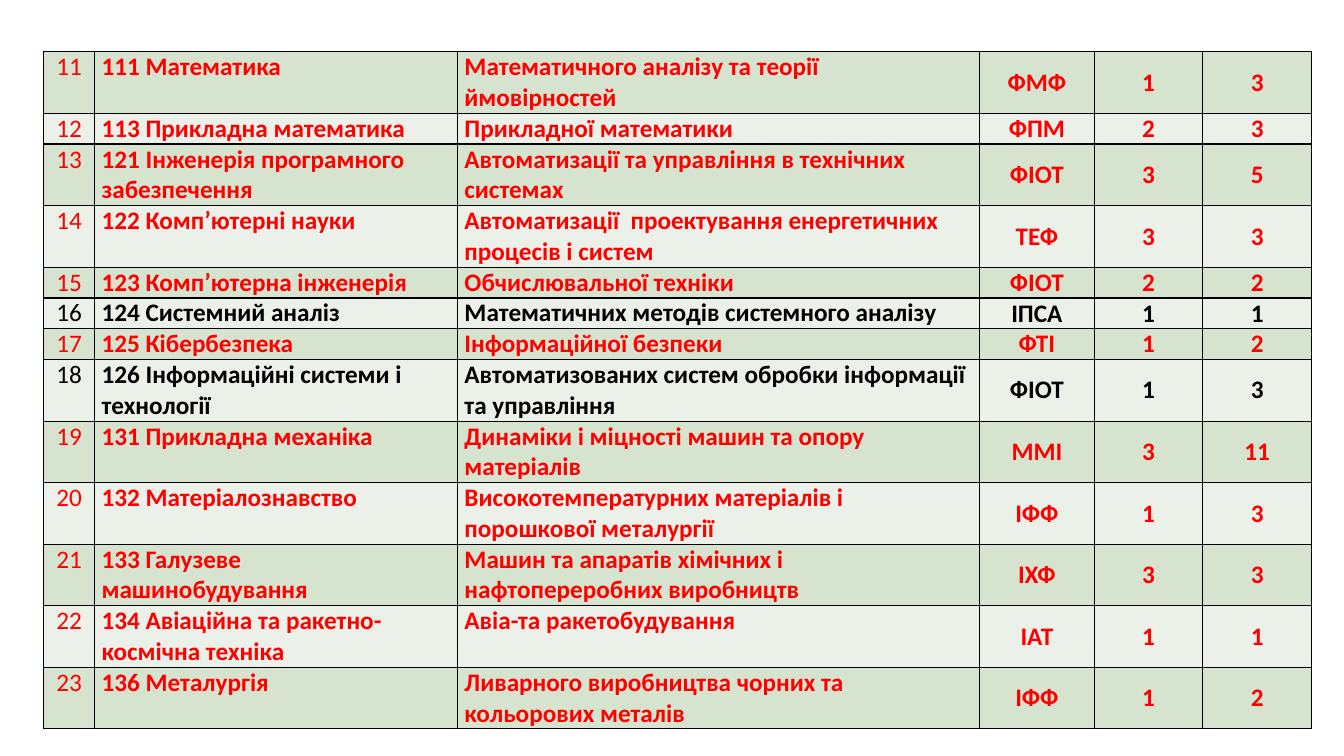
import dataclasses

import lxml.etree
import pptx
import pptx.dml.color
import pptx.enum.text
import pptx.oxml.ns
import pptx.table
import pptx.util

ALIGN = pptx.enum.text.PP_ALIGN
ANCHOR = pptx.enum.text.MSO_ANCHOR

SLIDE_WIDTH = pptx.util.Inches(13.33)
SLIDE_HEIGHT = pptx.util.Inches(7.5)


@dataclasses.dataclass(frozen=True)
class Theme:
    font: str = "Calibri"
    size: int = 18
    highlight: str = "FF0000"
    plain: str = "000000"
    border: str = "000000"
    border_width: int = 1
    bands: tuple[str, str] = ("D5E3CF", "EBF1E9")


@dataclasses.dataclass(frozen=True)
class Column:
    """A table column; its width is a percentage of the slide width."""
    width: float
    align: ALIGN = ALIGN.CENTER
    anchor: ANCHOR = ANCHOR.MIDDLE
    bold: bool = True


@dataclasses.dataclass(frozen=True)
class Speciality:
    name: str
    department: str
    faculty: str
    first_count: int
    second_count: int
    highlighted: bool = True


THEME = Theme()
FIRST_NUMBER = 11
LONGEST_ONE_LINE_DEPARTMENT = 40

COLUMNS = [
    Column(3.8, anchor=ANCHOR.TOP, bold=False),
    Column(27, ALIGN.LEFT, ANCHOR.TOP),
    Column(38.84, ALIGN.LEFT, ANCHOR.TOP),
    Column(8.55),
    Column(8.08),
    Column(8.08),
]

SPECIALITIES = [
    Speciality("111 Математика", "Математичного аналізу та теорії ймовірностей", "ФМФ", 1, 3),
    Speciality("113 Прикладна математика", "Прикладної математики", "ФПМ", 2, 3),
    Speciality("121 Інженерія програмного забезпечення",
               "Автоматизації та управління в технічних системах", "ФІОТ", 3, 5),
    Speciality("122 Комп’ютерні науки",
               "Автоматизації  проектування енергетичних процесів і систем", "ТЕФ", 3, 3),
    Speciality("123 Комп’ютерна інженерія", "Обчислювальної техніки", "ФІОТ", 2, 2),
    Speciality("124 Системний аналіз", "Математичних методів системного аналізу",
               "ІПСА", 1, 1, highlighted=False),
    Speciality("125 Кібербезпека", "Інформаційної безпеки", "ФТІ", 1, 2),
    Speciality("126 Інформаційні системи і технології",
               "Автоматизованих систем обробки інформації та управління",
               "ФІОТ", 1, 3, highlighted=False),
    Speciality("131 Прикладна механіка",
               "Динаміки і міцності машин та опору матеріалів", "ММІ", 3, 11),
    Speciality("132 Матеріалознавство",
               "Високотемпературних матеріалів і порошкової металургії", "ІФФ", 1, 3),
    Speciality("133 Галузеве машинобудування",
               "Машин та апаратів хімічних і нафтопереробних виробництв", "ІХФ", 3, 3),
    Speciality("134 Авіаційна та ракетно-космічна техніка", "Авіа-та ракетобудування",
               "ІАТ", 1, 1),
    Speciality("136 Металургія", "Ливарного виробництва чорних та кольорових металів",
               "ІФФ", 1, 2),
]


def across(percent: float) -> int:
    """Turn a percentage of the slide width into a length."""
    return round(SLIDE_WIDTH * percent / 100)


def down(percent: float) -> int:
    """Turn a percentage of the slide height into a length."""
    return round(SLIDE_HEIGHT * percent / 100)


def write_text(cell: pptx.table._Cell, text: str, *, color: str, bold: bool,
               align: ALIGN, anchor: ANCHOR) -> None:
    cell.vertical_anchor = anchor
    cell.margin_left = cell.margin_right = pptx.util.Inches(0.07)
    cell.margin_top = cell.margin_bottom = 0
    para = cell.text_frame.paragraphs[0]
    para.alignment = align
    span = para.add_run()
    span.text = text
    span.font.name = THEME.font
    span.font.size = pptx.util.Pt(THEME.size)
    span.font.bold = bold
    span.font.color.rgb = pptx.dml.color.RGBColor.from_string(color)


def fill_cell(cell: pptx.table._Cell, color: str) -> None:
    cell.fill.solid()
    cell.fill.fore_color.rgb = pptx.dml.color.RGBColor.from_string(color)


def outline_cell(cell: pptx.table._Cell) -> None:
    qualified = pptx.oxml.ns.qn
    properties = cell._tc.get_or_add_tcPr()
    for position, side in enumerate(("a:lnL", "a:lnR", "a:lnT", "a:lnB")):
        line = lxml.etree.Element(qualified(side), w=str(pptx.util.Pt(THEME.border_width)))
        paint = lxml.etree.SubElement(line, qualified("a:solidFill"))
        lxml.etree.SubElement(paint, qualified("a:srgbClr"), val=THEME.border)
        properties.insert(position, line)


def row_height(speciality: Speciality) -> int:
    lines = 2 if len(speciality.department) > LONGEST_ONE_LINE_DEPARTMENT else 1
    return down(3.6 * lines)


def fill_row(table: pptx.table.Table, index: int, speciality: Speciality) -> None:
    table.rows[index].height = row_height(speciality)
    color = THEME.highlight if speciality.highlighted else THEME.plain
    values = (FIRST_NUMBER + index, speciality.name, speciality.department,
              speciality.faculty, speciality.first_count, speciality.second_count)
    for cell, column, value in zip(table.rows[index].cells, COLUMNS, values):
        write_text(cell, str(value), color=color, bold=column.bold,
                   align=column.align, anchor=column.anchor)
        fill_cell(cell, THEME.bands[index % 2])
        outline_cell(cell)


def main() -> None:
    deck = pptx.Presentation()
    deck.slide_width, deck.slide_height = SLIDE_WIDTH, SLIDE_HEIGHT
    page = deck.slides.add_slide(deck.slide_layouts.get_by_name("Blank"))
    table = page.shapes.add_table(
        len(SPECIALITIES), len(COLUMNS), across(3.24), down(6.84),
        across(sum(column.width for column in COLUMNS)),
        sum(map(row_height, SPECIALITIES))).table
    table.first_row = table.horz_banding = False
    for table_column, column in zip(table.columns, COLUMNS):
        table_column.width = across(column.width)
    for index, speciality in enumerate(SPECIALITIES):
        fill_row(table, index, speciality)
    deck.save("out.pptx")


if __name__ == "__main__":
    main()
